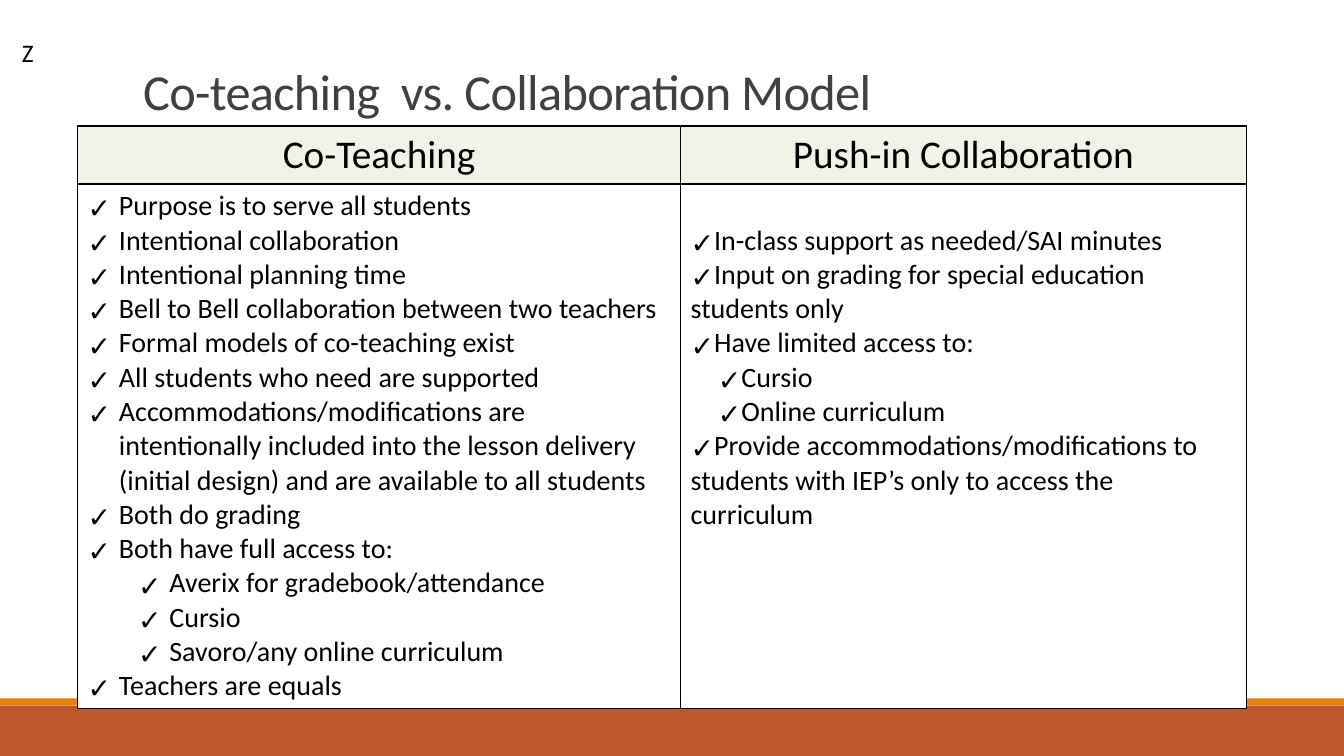
from dataclasses import dataclass
from pptx import Presentation
from pptx.dml.color import RGBColor as RGB
from pptx.enum.shapes import MSO_SHAPE as Shape
from pptx.enum.text import MSO_ANCHOR as Anchor, MSO_AUTO_SIZE as Auto, PP_ALIGN as Align
from pptx.oxml import parse_xml
from pptx.oxml.ns import nsdecls
from pptx.util import Inches, Pt


@dataclass(frozen=True)
class Theme:
    font: str = "Calibri"
    ink: str = "000000"
    title: str = "404040"
    head: str = "F3F2E6"
    body: str = "FFFFFF"
    rust: str = "BD582C"
    amber: str = "E48312"
    big: int = 36
    mid: int = 28
    text: int = 20
    small: int = 18


THEME = Theme()
WIDE, HIGH = 13.33, 7.5
COLS, ROWS = (5.98, 5.61), (0.48, 5.12)
LINE = 0.34  # height of one line of body text

HEADS = ("Co-Teaching", "Push-in Collaboration")
# Each point is (level, words)
TEAM = (
    (0, "Purpose is to serve all students"),
    (0, "Intentional collaboration"),
    (0, "Intentional planning time"),
    (0, "Bell to Bell collaboration between two teachers"),
    (0, "Formal models of co-teaching exist"),
    (0, "All students who need are supported"),
    (0, "Accommodations/modifications are intentionally included into the "
        "lesson delivery (initial design) and are available to all students"),
    (0, "Both do grading"),
    (0, "Both have full access to:"),
    (1, "Averix for gradebook/attendance"),
    (1, "Cursio"),
    (1, "Savoro/any online curriculum"),
    (0, "Teachers are equals"),
)
PUSH = (
    (0, "In-class support as needed/SAI minutes"),
    (0, "Input on grading for special education students only"),
    (0, "Have limited access to:"),
    (1, "Cursio"),
    (1, "Online curriculum"),
    (0, "Provide accommodations/modifications to students with IEP’s only "
        "to access the curriculum"),
)


def add_run(para, words, size, color=THEME.ink):
    run = para.add_run()
    run.text = words
    font = run.font
    font.name, font.size, font.bold = THEME.font, Pt(size), False
    font.color.rgb = RGB.from_string(color)
    return run


def add_band(slide, top, high, color):
    band = slide.shapes.add_shape(
        Shape.RECTANGLE, 0, Inches(top), Inches(WIDE), Inches(high))
    band.shadow.inherit = False
    band.fill.solid()
    band.fill.fore_color.rgb = RGB.from_string(color)
    band.line.fill.background()


def set_title(slide, words):
    title = slide.shapes.title
    title.left, title.top = Inches(1.32), Inches(0.39)
    title.width, title.height = Inches(10.5), Inches(0.86)
    frame = title.text_frame
    frame.auto_size, frame.vertical_anchor = Auto.NONE, Anchor.BOTTOM
    para = frame.paragraphs[0]
    para.alignment, para.line_spacing = Align.LEFT, 0.85
    run = add_run(para, words, THEME.big, THEME.title)
    run.font._element.set("spc", "-50")


def add_label(slide, words):
    box = slide.shapes.add_textbox(
        Inches(0.12), Inches(0.32), Inches(0.8), Inches(0.4))
    box.text_frame.word_wrap = True
    add_run(box.text_frame.paragraphs[0], words, THEME.small)


def style_cell(cell, color):
    """Fill the cell and rule all four sides."""
    cell.fill.solid()
    cell.fill.fore_color.rgb = RGB.from_string(color)
    props = cell._tc.get_or_add_tcPr()
    for spot, side in enumerate("LRTB"):
        props.insert(spot, parse_xml(
            f'<a:ln{side} {nsdecls("a")} w="{Pt(1)}"><a:solidFill>'
            f'<a:srgbClr val="{THEME.ink}"/></a:solidFill></a:ln{side}>'))


def add_check(para, left, hang):
    props = para._p.get_or_add_pPr()
    props.set("marL", str(Inches(left)))
    props.set("indent", str(-Inches(hang)))
    props.append(parse_xml(f'<a:buFont {nsdecls("a")} typeface="Noto Sans Symbols"/>'))
    props.append(parse_xml(f'<a:buChar {nsdecls("a")} char="✓"/>'))


def fill_list(cell, points, step, hang):
    """Write checked points; each level moves in by step inches."""
    frame = cell.text_frame
    for spot, (level, words) in enumerate(points):
        para = frame.add_paragraph() if spot else frame.paragraphs[0]
        para.level = level
        add_check(para, hang + level * step, hang)
        add_run(para, words, THEME.text)


def add_grid(slide):
    grid = slide.shapes.add_table(
        len(ROWS), len(COLS), Inches(0.77), Inches(1.25),
        Inches(sum(COLS)), Inches(sum(ROWS))).table
    grid.first_row = grid.horz_banding = False
    for col, wide in zip(grid.columns, COLS):
        col.width = Inches(wide)
    for row, high, color in zip(grid.rows, ROWS, (THEME.head, THEME.body)):
        row.height = Inches(high)
        for cell in row.cells:
            style_cell(cell, color)
    for cell, words in zip(grid.rows[0].cells, HEADS):
        para = cell.text_frame.paragraphs[0]
        para.alignment = Align.CENTER
        add_run(para, words, THEME.mid)
    team, push = grid.rows[1].cells
    fill_list(team, TEAM, step=0.5, hang=0.31)
    push.margin_top = Inches(0.05 + LINE)
    fill_list(push, PUSH, step=0.27, hang=0)


def main():
    deck = Presentation()
    deck.slide_width, deck.slide_height = Inches(WIDE), Inches(HIGH)
    slide = deck.slides.add_slide(deck.slide_layouts[5])
    add_band(slide, HIGH - 0.5, 0.5, THEME.rust)
    add_band(slide, HIGH - 0.57, 0.07, THEME.amber)
    set_title(slide, "Co-teaching  vs. Collaboration Model")
    add_grid(slide)
    add_label(slide, "Z")
    deck.save("out.pptx")


if __name__ == "__main__":
    main()
